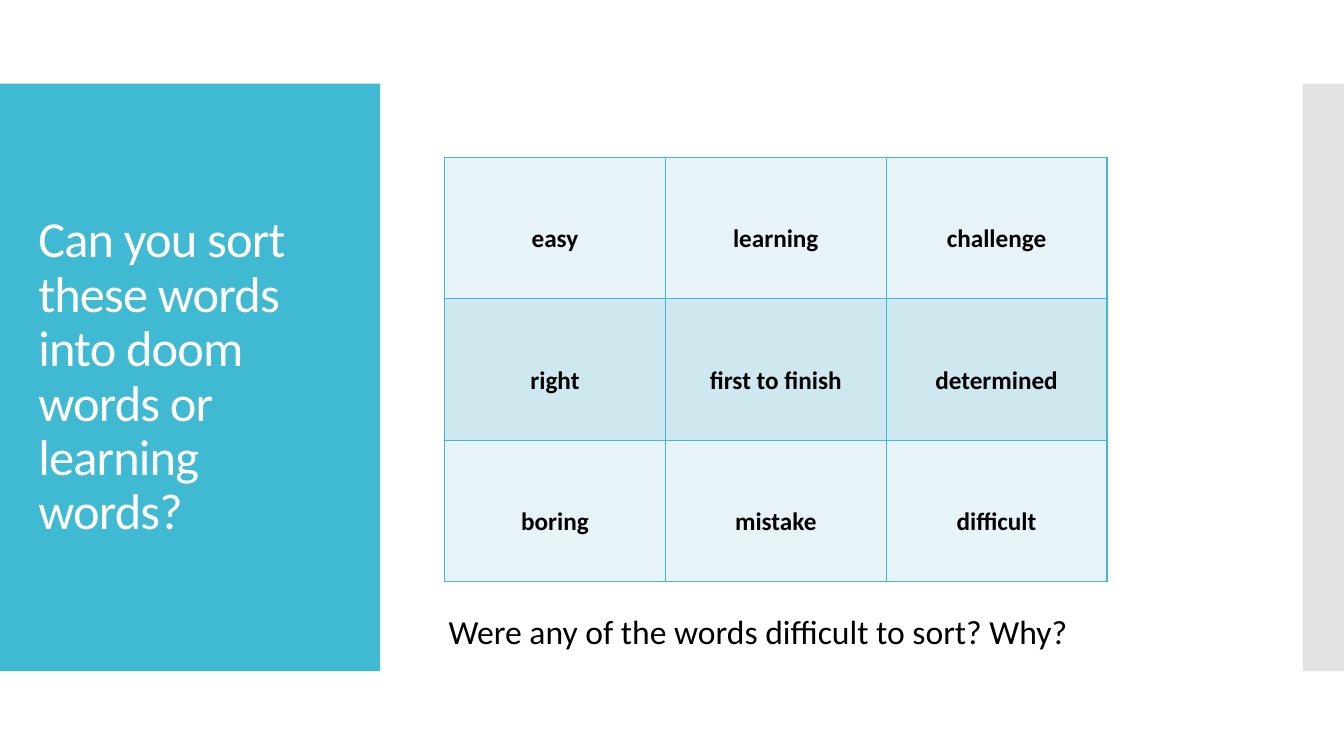
"""Build the word-sorting slide with its title panel, word grid and question."""
from dataclasses import dataclass

from lxml import etree
from pptx import Presentation
from pptx.dml.color import RGBColor
from pptx.enum import shapes, text
from pptx.oxml import ns
from pptx.util import Inches, Pt


@dataclass(frozen=True)
class Theme:
    font: str = "Calibri"
    accent: str = "40BAD2"
    edge: str = "C8C8C8"
    white: str = "FFFFFF"
    ink: str = "000000"
    bands: tuple[str, str] = ("E8F3F7", "CFE7EE")
    title_size: int = 36
    word_size: int = 18
    question_size: int = 24
    border_width: int = 1


@dataclass(frozen=True)
class Box:
    left: float
    top: float
    width: float
    height: float

    def lengths(self) -> tuple:
        return tuple(Inches(n) for n in (self.left, self.top, self.width, self.height))


@dataclass(frozen=True)
class Panel:
    box: Box
    color: str
    opacity: int = 100


THEME = Theme()
PANELS = (
    Panel(Box(0, 0.83, 3.77, 5.83), THEME.accent),
    Panel(Box(12.92, 0.83, 0.42, 5.83), THEME.edge, 50),
)
TITLE_BOX = Box(0.28, 1.23, 3.22, 5.03)
GRID_BOX = Box(4.41, 1.56, 6.57, 4.21)
QUESTION_BOX = Box(4.35, 6.01, 6.55, 0.5)
TITLE = "Can you sort these words into doom words or learning words?"
QUESTION = "Were any of the words difficult to sort? Why?"
WORDS = (
    ("easy", "learning", "challenge"),
    ("right", "first to finish", "determined"),
    ("boring", "mistake", "difficult"),
)


def apply(target, formats: dict) -> None:
    for name, value in formats.items():
        setattr(target, name, value)


def write(frame, wording: str, size: int, color: str, bold: bool = False, **layout):
    paragraph = frame.paragraphs[0]
    run = paragraph.add_run()
    run.text = wording
    apply(run.font, {"name": THEME.font, "size": Pt(size), "bold": bold})
    run.font.color.rgb = RGBColor.from_string(color)
    apply(paragraph, layout)
    return run


def add_panel(slide, panel: Panel) -> None:
    block = slide.shapes.add_shape(shapes.MSO_SHAPE.RECTANGLE, *panel.box.lengths())
    block.shadow.inherit = False
    block.fill.solid()
    block.fill.fore_color.rgb = RGBColor.from_string(panel.color)
    block.line.fill.background()
    if panel.opacity < 100:
        tint = block.fill._xPr.find(".//" + ns.qn("a:srgbClr"))
        etree.SubElement(tint, ns.qn("a:alpha"), val=str(panel.opacity * 1000))


def add_title(slide) -> None:
    title = slide.shapes.title
    apply(title, dict(zip(("left", "top", "width", "height"), TITLE_BOX.lengths())))
    apply(title.text_frame, {
        "word_wrap": True,
        "auto_size": text.MSO_AUTO_SIZE.NONE,
        "vertical_anchor": text.MSO_ANCHOR.MIDDLE,
    })
    run = write(title.text_frame, TITLE, THEME.title_size, THEME.white,
                alignment=text.PP_ALIGN.LEFT, line_spacing=0.9)
    run._r.get_or_add_rPr().set("spc", "-60")


def add_borders(cell) -> None:
    properties = cell._tc.get_or_add_tcPr()
    for position, side in enumerate(("lnL", "lnR", "lnT", "lnB")):
        border = etree.Element(ns.qn(f"a:{side}"), w=str(Pt(THEME.border_width)))
        fill = etree.SubElement(border, ns.qn("a:solidFill"))
        etree.SubElement(fill, ns.qn("a:srgbClr"), val=THEME.accent)
        properties.insert(position, border)


def add_word_grid(slide) -> None:
    grid = slide.shapes.add_table(len(WORDS), len(WORDS[0]), *GRID_BOX.lengths()).table
    apply(grid, {"first_row": False, "horz_banding": False})
    for row, words in enumerate(WORDS):
        for column, word in enumerate(words):
            cell = grid.cell(row, column)
            cell.fill.solid()
            cell.fill.fore_color.rgb = RGBColor.from_string(THEME.bands[row % 2])
            write(cell.text_frame, word, THEME.word_size, THEME.ink, bold=True,
                  alignment=text.PP_ALIGN.CENTER, line_spacing=3.0)
            add_borders(cell)


def add_question(slide) -> None:
    question = slide.shapes.add_textbox(*QUESTION_BOX.lengths())
    apply(question.text_frame, {
        "word_wrap": True,
        "auto_size": text.MSO_AUTO_SIZE.SHAPE_TO_FIT_TEXT,
    })
    write(question.text_frame, QUESTION, THEME.question_size, THEME.ink)


def main() -> None:
    deck = Presentation()
    apply(deck, {"slide_width": Inches(13.33), "slide_height": Inches(7.5)})
    slide = deck.slides.add_slide(deck.slide_layouts.get_by_name("Title Only"))
    for panel in PANELS:
        add_panel(slide, panel)
    title_element = slide.shapes.title._element
    title_element.getparent().append(title_element)
    add_title(slide)
    add_word_grid(slide)
    add_question(slide)
    deck.save("out.pptx")


if __name__ == "__main__":
    main()
